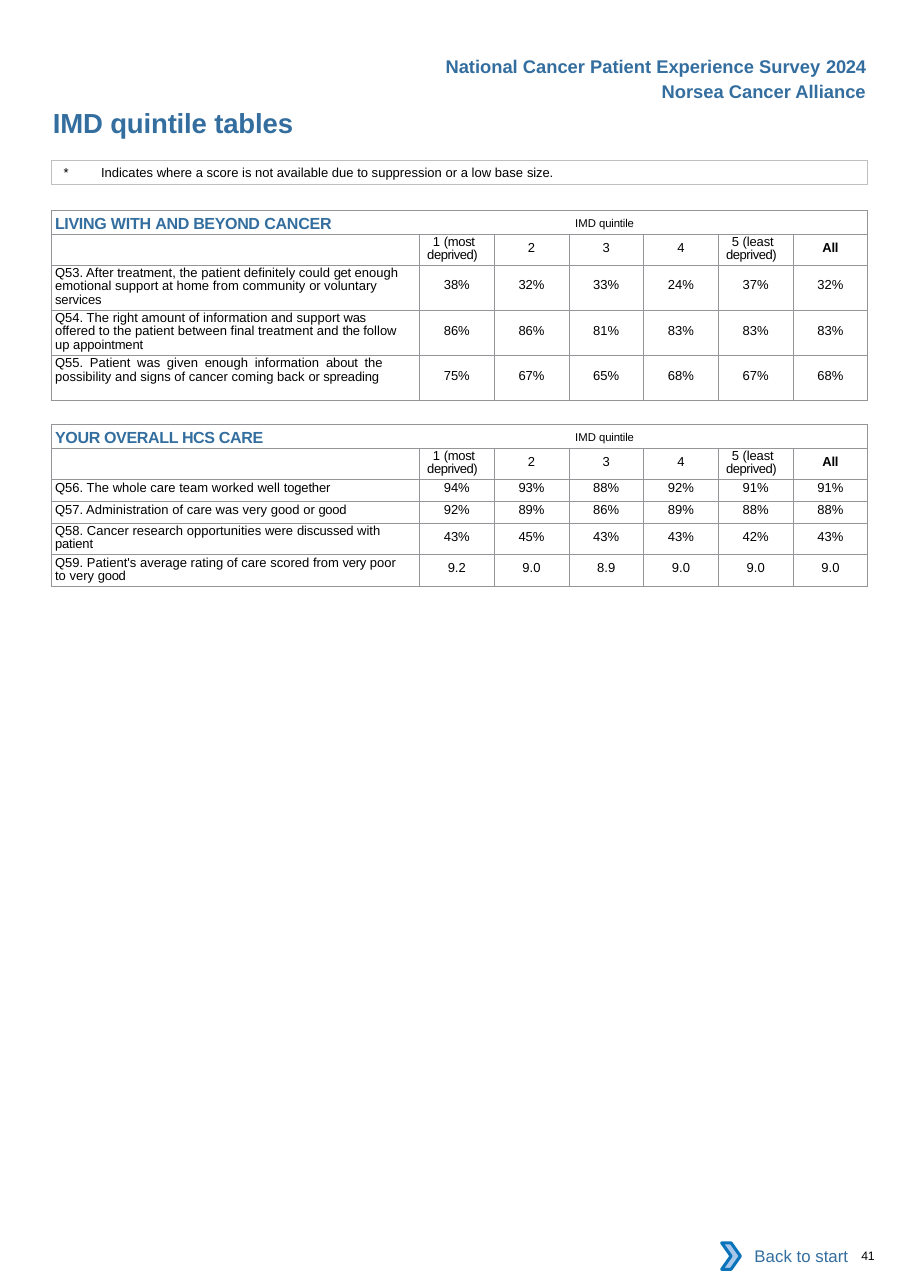
import lxml.etree
import pptx
import pptx.dml.color
import pptx.enum.shapes
import pptx.enum.text
import pptx.oxml.ns
import pptx.util

Cm, Pt = pptx.util.Cm, pptx.util.Pt
ALIGN = pptx.enum.text.PP_ALIGN
ANCHOR = pptx.enum.text.MSO_ANCHOR
SHAPE = pptx.enum.shapes.MSO_SHAPE
BLUE = pptx.dml.color.RGBColor(0x33, 0x6E, 0x9F)
BLACK = pptx.dml.color.RGBColor(0, 0, 0)
WHITE = pptx.dml.color.RGBColor(0xFF, 0xFF, 0xFF)
BORDER_GREY = pptx.dml.color.RGBColor(0x93, 0x95, 0x98)
NOTE_GREY = pptx.dml.color.RGBColor(0xBF, 0xBF, 0xBF)
CHEVRON_FILL = pptx.dml.color.RGBColor(0xA8, 0xC7, 0xE9)
CHEVRON_LINE = pptx.dml.color.RGBColor(0x0A, 0x74, 0xBB)

# Content: every text is a list of (words, letter spacing in points)
TITLE = [("IMD quintile tables", -0.1)]
SURVEY = [("National Cancer Patient Experience Survey ", 0), ("2024", -0.2)]
ALLIANCE = [("Norsea Cancer Alliance", 0)]
NOTE = [("*", -0.5),
        ("\tIndicates where a score is not available due to suppression or a low base ", 0),
        ("size", -0.1), (".", -0.1)]
BACK = [("Back to start", 0)]
PAGE_NUMBER = [("41", -0.2)]
QUINTILE = [("IMD ", 0), ("quintile", -0.1)]
HEADINGS = [
    [("1 ", 0), ("(most ", -0.2), ("deprived)", -0.3)],
    [("2", -0.5)], [("3", -0.5)], [("4", -0.5)],
    [("5 ", 0), ("(least ", -0.1), ("deprived)", -0.3)],
    [("All", -0.2)],
]
# Section: top (cm), heading, rows of (lines, label, scores)
SECTIONS = [
    (4.85, [("LIVING ", -0.2), ("WITH ", -0.1), ("AND BEYOND ", -0.2), ("CANCER\t", -0.1)], [
        (3, [("Q53. After treatment, the patient definitely could", 0), (" get ", -0.2),
             ("enough emotional support at home from community ", 0), ("or ", -0.2),
             ("voluntary ", 0), ("services", -0.1)],
         ["38%", "32%", "33%", "24%", "37%", "32%"]),
        (3, [("Q54. The right amount of information and support", 0), (" was ", -0.2),
             ("offered to the patient between final treatment and ", 0), ("the ", -0.2),
             ("follow up ", 0), ("appointment", -0.1)],
         ["86%", "86%", "81%", "83%", "83%", "83%"]),
        (3, [("Q55. Patient was given enough information ", 0), ("about ", -0.1),
             ("the possibility and signs of cancer coming back ", 0), ("or ", -0.2),
             ("spreading", -0.1)],
         ["75%", "67%", "65%", "68%", "67%", "68%"]),
    ]),
    (9.79, [("YOUR OVERALL HCS CARE\t", -0.2)], [
        (1, [("Q56. The whole care team worked well ", 0), ("together", -0.1)],
         ["94%", "93%", "88%", "92%", "91%", "91%"]),
        (1, [("Q57. Administration of care was very good or", 0), (" good", -0.2)],
         ["92%", "89%", "86%", "89%", "88%", "88%"]),
        (2, [("Q58. Cancer research opportunities were ", 0), ("discussed ", -0.1),
             ("with ", 0), ("patient", -0.1)],
         ["43%", "45%", "43%", "43%", "42%", "43%"]),
        (2, [("Q59. Patient's average rating of care scored from", 0), (" very ", -0.2),
             ("poor to very ", 0), ("good", -0.2)],
         ["9.2", "9.0", "8.9", "9.0", "9.0", "9.0"]),
    ]),
]
JUSTIFIED = "Q55"

# Measures in cm
LEFT, WIDTH, LABEL_WIDTH = 1.19, 18.82, 8.48
SCORE_WIDTH = (WIDTH - LABEL_WIDTH) / len(HEADINGS)
TITLE_ROW, HEADING_ROW = 0.54, 0.72
ROW_HEIGHT = {1: 0.5, 2: 0.73, 3: 1.04}
SCORE_TOP = {1: 0.03, 2: 0.15, 3: 0.3}
LABEL_TOP = {1: 0.03, 2: 0.05, 3: 0.05}
TIGHT = Pt(8.6)


def add_runs(paragraph, texts, size, color=BLACK, bold=False, baseline=0):
    for words, spacing in texts:
        run = paragraph.add_run()
        run.text = words
        font = run.font
        font.name, font.size, font.bold = "Arial", Pt(size), bold
        font.color.rgb = color
        properties = run._r.get_or_add_rPr()
        properties.set("spc", str(round(spacing * 100)))
        if baseline:
            properties.set("baseline", str(baseline * 1000))


def indent(paragraph, left, first=0, tab=None):
    properties = paragraph._p.get_or_add_pPr()
    properties.set("marL", str(Cm(left)))
    if first:  # an explicit first-line indent would reset the tab stops
        properties.set("indent", str(Cm(first)))
    if tab:
        tabs = lxml.etree.SubElement(properties, pptx.oxml.ns.qn("a:tabLst"))
        lxml.etree.SubElement(tabs, pptx.oxml.ns.qn("a:tab"), pos=str(Cm(tab)), algn="l")


def set_margins(target, left, top, right, bottom):
    target.margin_left, target.margin_top = Cm(left), Cm(top)
    target.margin_right, target.margin_bottom = Cm(right), Cm(bottom)


def add_text(slide, box, texts, size, color=BLUE, bold=False, left=None):
    frame = slide.shapes.add_textbox(*map(Cm, box)).text_frame
    paragraph = frame.paragraphs[0]
    if left is None:
        frame.word_wrap = False
        paragraph.alignment = ALIGN.RIGHT
    else:
        frame.word_wrap = True
        set_margins(frame, 0, 0, 0, 0)
        indent(paragraph, left)
    add_runs(paragraph, texts, size, color, bold)


def add_box(shapes, kind, box, fill=None, line=None, line_width=0.5):
    shape = shapes.add_shape(kind, *map(Cm, box))
    shape.shadow.inherit = False
    for part, color in ((shape.fill, fill), (shape.line.fill, line)):
        if color is None:
            part.background()
        else:
            part.solid()
            part.fore_color.rgb = color
    if line is not None:
        shape.line.width = Pt(line_width)
    return shape


def style_cell(cell):
    set_margins(cell, 0, 0, 0, 0)
    cell.fill.background()
    properties = cell._tc.get_or_add_tcPr()
    for index, side in enumerate("LRTB"):
        line = lxml.etree.Element(pptx.oxml.ns.qn("a:ln" + side), w=str(Pt(0.5)))
        fill = lxml.etree.SubElement(line, pptx.oxml.ns.qn("a:solidFill"))
        lxml.etree.SubElement(fill, pptx.oxml.ns.qn("a:srgbClr"), val=str(BORDER_GREY))
        properties.insert(index, line)


def shrink_blank(cell):
    """Give an empty cell a small font so that it does not stretch its row."""
    lxml.etree.SubElement(cell.text_frame.paragraphs[0]._p,
                          pptx.oxml.ns.qn("a:endParaRPr"), sz="850")


def fill_cell(cell, texts, top, alignment=ALIGN.CENTER, bold=False):
    cell.margin_top = Cm(top)
    paragraph = cell.text_frame.paragraphs[0]
    paragraph.alignment = alignment
    add_runs(paragraph, texts, 8.5, bold=bold)
    return paragraph


def add_section(slide, top, heading, rows):
    heights = [TITLE_ROW, HEADING_ROW] + [ROW_HEIGHT[lines] for lines, _, _ in rows]
    frame = slide.shapes.add_table(len(heights), len(HEADINGS) + 1,
                                   Cm(LEFT), Cm(top), Cm(WIDTH), Cm(sum(heights)))
    table = frame.table
    table.first_row = table.horz_banding = False
    for index, column in enumerate(table.columns):
        column.width = Cm(SCORE_WIDTH if index else LABEL_WIDTH)
    for row, height in zip(table.rows, heights):
        row.height = Cm(height)
    for cell in table.iter_cells():
        style_cell(cell)

    # Section heading across all columns
    title = table.cell(0, 0)
    title.merge(table.cell(0, len(HEADINGS)))
    title.vertical_anchor = ANCHOR.MIDDLE
    paragraph = title.text_frame.paragraphs[0]
    indent(paragraph, 0.08, tab=11.99)
    add_runs(paragraph, heading, 10.5, BLUE, True)
    add_runs(paragraph, QUINTILE, 12.8, baseline=10)
    for column in range(1, len(HEADINGS) + 1):
        shrink_blank(table.cell(0, column))

    # Quintile headings
    shrink_blank(table.cell(1, 0))
    for column, texts in enumerate(HEADINGS, 1):
        wraps = len(texts) > 1
        paragraph = fill_cell(table.cell(1, column), texts, 0.05 if wraps else 0.15,
                              ALIGN.LEFT if wraps else ALIGN.CENTER, column == len(HEADINGS))
        if wraps:
            indent(paragraph, 0.18, 0.13)
            paragraph.line_spacing = TIGHT

    # Questions and scores
    for number, (lines, label, scores) in enumerate(rows, 2):
        justified = label[0][0].startswith(JUSTIFIED)
        cell = table.cell(number, 0)
        paragraph = fill_cell(cell, label, LABEL_TOP[lines],
                              ALIGN.JUSTIFY if justified else ALIGN.LEFT)
        cell.margin_right = Cm(0.85 if justified else 0.4)
        indent(paragraph, 0.08)
        if lines > 1:
            paragraph.line_spacing = TIGHT
        for column, score in enumerate(scores, 1):
            fill_cell(table.cell(number, column), [(score, 0)], SCORE_TOP[lines])


def main():
    presentation = pptx.Presentation()
    presentation.slide_width, presentation.slide_height = Cm(20.98), Cm(29.69)
    slide = presentation.slides.add_slide(presentation.slide_layouts[6])

    # Page number, title and tables
    add_text(slide, (19.61, 28.78, 1.3, 0.33), PAGE_NUMBER, 8, BLACK, left=0.25)
    add_text(slide, (LEFT, 2.44, 11.43, 0.76), TITLE, 18, bold=True, left=0.03)
    for section in SECTIONS:
        add_section(slide, *section)

    # Survey heading
    add_text(slide, (14.81, 1.73, 5.41, 0.76), ALLIANCE, 12, bold=True)
    add_text(slide, (9.96, 1.15, 10.26, 0.76), SURVEY, 12, bold=True)

    # Suppression note
    note = add_box(slide.shapes, SHAPE.RECTANGLE, (LEFT, 3.7, WIDTH, 0.56), line=NOTE_GREY)
    note.text_frame.vertical_anchor = ANCHOR.TOP
    set_margins(note.text_frame, 0, 0.1, 0, 0.1)
    paragraph = note.text_frame.paragraphs[0]
    paragraph.alignment = ALIGN.LEFT
    indent(paragraph, 0.28, tab=0.86)
    add_runs(paragraph, NOTE, 8.5)

    # Back to start button
    button = slide.shapes.add_group_shape()
    label = add_box(button.shapes, SHAPE.RECTANGLE, (16.81, 28.42, 3, 1.07), WHITE)
    label.text_frame.vertical_anchor = ANCHOR.MIDDLE
    paragraph = label.text_frame.paragraphs[0]
    paragraph.alignment = ALIGN.RIGHT
    add_runs(paragraph, BACK, 11, BLUE)
    add_box(button.shapes, SHAPE.CHEVRON, (16.64, 28.65, 0.43, 0.61),
            CHEVRON_FILL, CHEVRON_LINE, 2)

    presentation.save("out.pptx")


if __name__ == "__main__":
    main()
